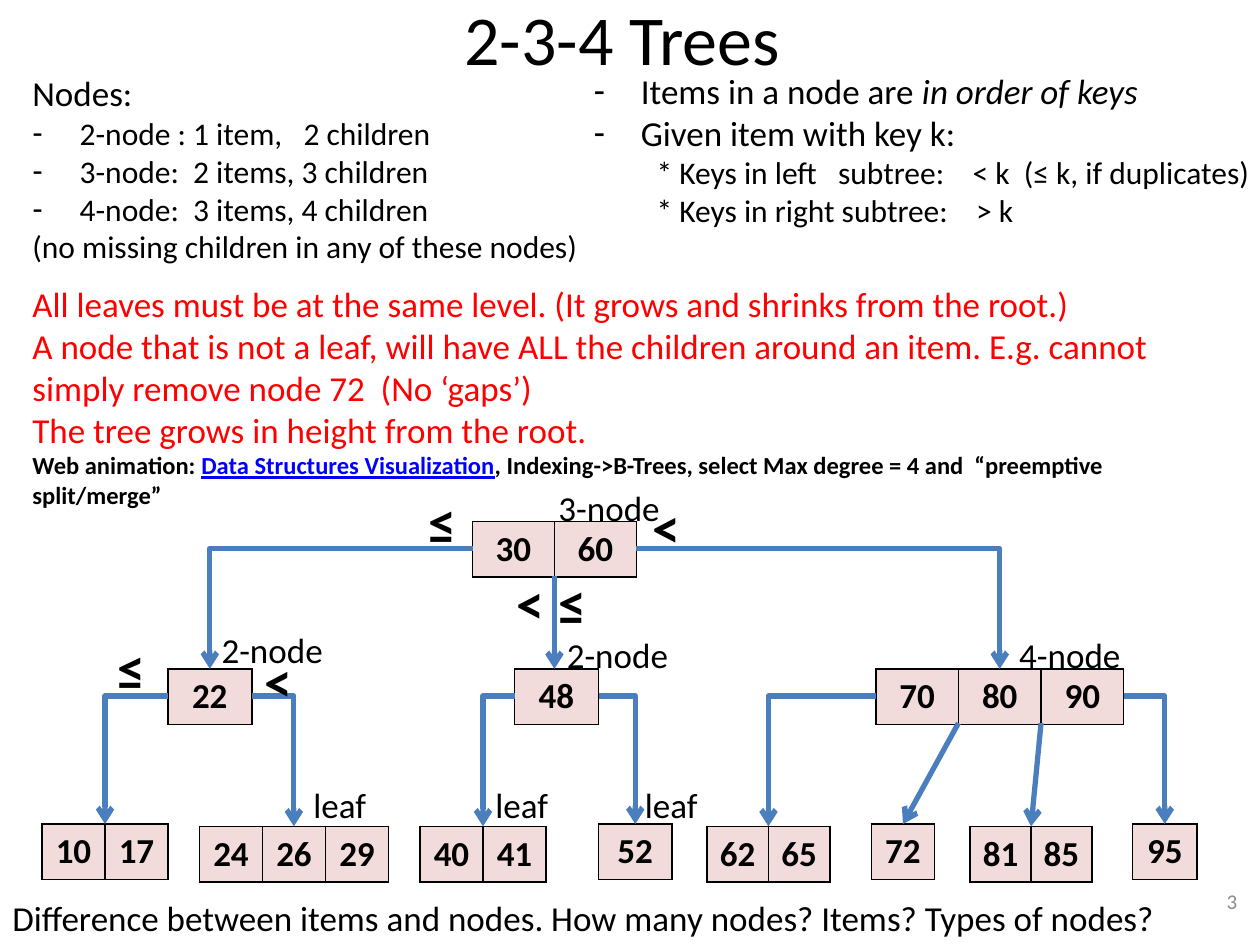
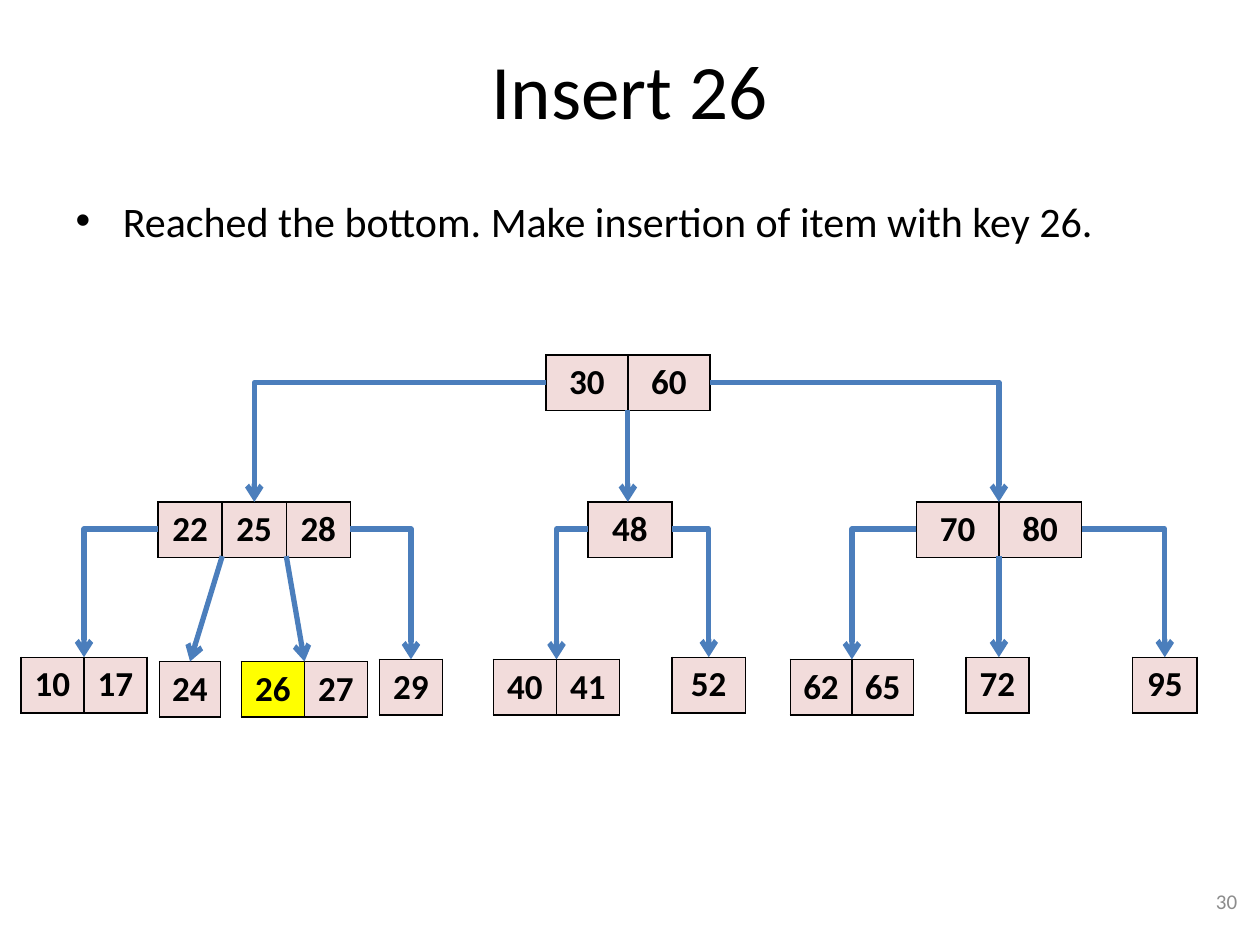
from lxml import etree
from pptx import Presentation
from pptx.dml.color import RGBColor
from pptx.enum.shapes import MSO_CONNECTOR
from pptx.enum.text import MSO_ANCHOR, MSO_AUTO_SIZE, PP_ALIGN
from pptx.oxml.ns import qn
from pptx.util import Pt

STRAIGHT, ELBOW = MSO_CONNECTOR.STRAIGHT, MSO_CONNECTOR.ELBOW
NO_FIT, MIDDLE = MSO_AUTO_SIZE.NONE, MSO_ANCHOR.MIDDLE
LEFT, CENTER, RIGHT = PP_ALIGN.LEFT, PP_ALIGN.CENTER, PP_ALIGN.RIGHT

THEME = {
    "font": "Calibri",
    "ink": "000000", "rule": "FF0000", "web": "0000FF", "number": "8C8C8C",
    "arrow": "4B7EBC", "node": "F2DCDB", "inserted": "FFFF00",
    "large": Pt(24), "normal": Pt(20), "small": Pt(18), "note": Pt(14),
    "sign": Pt(32), "page": Pt(12),
}
NODE_HEIGHT = 31
NODE_MIDDLE = 15.5

NORMAL = {"size": THEME["normal"]}
SMALL = {"size": THEME["small"]}
RULE = {"size": THEME["normal"], "color": "rule"}
NOTE = {"size": THEME["note"], "bold": True}
SIGN = {"size": THEME["sign"], "bold": True}

FLUSH = (0, 0, None)
DASH = (27, -27, "-")
DOT = (27, -27, "•")
SUB = (36, 0, None)


def write_run(paragraph, text, color="ink", **formats):
    run = paragraph.add_run()
    run.text = text
    for attribute, value in {"name": THEME["font"], **formats}.items():
        setattr(run.font, attribute, value)
    run.font.color.rgb = RGBColor.from_string(THEME[color])


def add_label(slide, text, box, formats, align=LEFT):
    frame = slide.shapes.add_textbox(*map(Pt, box)).text_frame
    frame.word_wrap = True
    frame.paragraphs[0].alignment = align
    write_run(frame.paragraphs[0], text, **formats)
    return frame


node_kinds = [
    (FLUSH, 0, [("Nodes:", NORMAL)]),
    (DASH, 0, [("2-node : 1 item,   2 children", SMALL)]),
    (DASH, 0, [("3-node:  2 items, 3 children", SMALL)]),
    (DASH, 0, [("4-node:  3 items, 4 children", SMALL)]),
    (FLUSH, 0, [("(no missing children in any of these nodes)", SMALL)]),
    (FLUSH, 9.8, [("All leaves must be at the same level. (It grows and shrinks from the root.)", RULE)]),
    (FLUSH, 0, [("A node that is not a leaf, will have ALL the children around an item. "
                 "E.g. cannot simply remove node 72  (No ‘gaps’)", RULE)]),
    (FLUSH, 0, [("The tree grows in height from the root.", RULE)]),
    (FLUSH, 0, [
        ("Web animation: ", NOTE),
        ("Data Structures Visualization", {**NOTE, "color": "web", "underline": True}),
        (", Indexing->B-Trees, select Max degree = 4 and  “preemptive split/merge”", NOTE),
    ]),
]
key_order = [
    (DASH, 0, [("Items in a node are ", NORMAL), ("in order of keys", {**NORMAL, "italic": True})]),
    (DASH, 0, [("Given item with key k:", NORMAL)]),
    (SUB, 0, [("* Keys in left   subtree:    < k  (≤ k, if duplicates)", SMALL)]),
    (SUB, 0, [("* Keys in right subtree:    > k", SMALL)]),
]
insertion = [
    (DOT, 4.8, [("Reached the bottom. Make insertion of item with key 26.", {"size": THEME["large"]})]),
]

slides = [
    {
        "layout": 3, "number": "3",
        "title": ("2-3-4 Trees ", (36, 5.8, 648, 31), Pt(40)),
        "lists": [(1, (11.3, 37.5, 703, 243), node_kinds), (2, (332, 36, 398, 99), key_order)],
        "nodes": {
            "30 60": (270, 298, 46.8),
            "22": (95.9, 382.2, 48),
            "48": (294, 382.2, 48),
            "70 80 90": (500.5, 382.2, 47.2),
            "10 17": (24, 470.9, 36),
            "24 26 29": (114, 472.2, 36),
            "40 41": (240, 472.2, 36),
            "52": (342, 470.9, 42),
            "62 65": (403.9, 472.2, 35.2),
            "72": (498, 470.9, 36),
            "81 85": (554.4, 472.2, 34.8),
            "95": (647.2, 470.9, 36.8),
        },
        "children": {
            "30 60": ["22", "48", "70 80 90"],
            "22": ["10 17", "24 26 29"],
            "48": ["40 41", "52"],
            "70 80 90": ["62 65", "72", "81 85", "95"],
        },
        "inserted": None,
        "signs": [("≤", 60, 359.3), ("<", 144, 365.8), ("≤", 237.6, 275.8),
                  ("<", 288, 321.1), ("≤", 312, 321.8), ("<", 366, 278)],
        "captions": [("2-node", 119.5, 355.7), ("3-node", 312, 274.3), ("4-node", 575.3, 358.6),
                     ("2-node", 316.8, 358.6), ("leaf", 172, 444.2), ("leaf", 361.4, 444.2),
                     ("leaf", 276, 444.2)],
        "question": "Difference between items and nodes. How many nodes? Items? Types of nodes?",
    },
    {
        "layout": 1, "number": "30",
        "title": ("Insert 26", (36, 5.8, 648, 90), Pt(44)),
        "lists": [(1, (36, 108, 648, 396), insertion)],
        "nodes": {
            "30 60": (312, 203, 46.8),
            "22 25 28": (90.4, 286.8, 36.6),
            "48": (336, 286.8, 48),
            "70 80": (523.6, 286.8, 47.2),
            "10 17": (12, 375.6, 36),
            "24": (91.2, 378, 34.8),
            "26 27": (138, 378, 36),
            "29": (216.8, 376.8, 36),
            "40 41": (282, 376.8, 36),
            "52": (384, 375.6, 42),
            "62 65": (451.6, 376.8, 35.2),
            "72": (552, 375.6, 36),
            "95": (647.2, 375.6, 36.8),
        },
        "children": {
            "30 60": ["22 25 28", "48", "70 80"],
            "22 25 28": ["10 17", "24", "26 27", "29"],
            "48": ["40 41", "52"],
            "70 80": ["62 65", "72", "95"],
        },
        "inserted": "26",
        "signs": [], "captions": [], "question": None,
    },
]

deck = Presentation()
deck.slide_width, deck.slide_height = Pt(720), Pt(540)

for content in slides:
    slide = deck.slides.add_slide(deck.slide_layouts[content["layout"]])
    heading, heading_box, heading_size = content["title"]
    areas = [(0, heading_box, [(None, 0, [(heading, {"size": heading_size})])])] + content["lists"]
    for index, box, entries in areas:
        area = slide.placeholders[index]
        area.left, area.top, area.width, area.height = map(Pt, box)
        area.text_frame.auto_size = NO_FIT
        for position, (indent, gap, runs) in enumerate(entries):
            line = area.text_frame.add_paragraph() if position else area.text_frame.paragraphs[0]
            line.space_before = Pt(gap)
            for text, formats in runs:
                write_run(line, text, **formats)
            if indent:
                margin, hanging, mark = indent
                properties = line._p.get_or_add_pPr()
                properties.set("marL", str(Pt(margin)))
                properties.set("indent", str(Pt(hanging)))
                bullet = etree.SubElement(properties, qn("a:buChar" if mark else "a:buNone"))
                if mark:
                    bullet.set("char", mark)

    nodes = content["nodes"]
    for name, (left, top, key_width) in nodes.items():
        keys = name.split()
        node = slide.shapes.add_table(
            1, len(keys), Pt(left), Pt(top), Pt(key_width * len(keys)), Pt(NODE_HEIGHT)).table
        node.first_row = node.horz_banding = False
        for column, key in enumerate(keys):
            node.columns[column].width = Pt(key_width)
            cell = node.cell(0, column)
            cell.margin_left = cell.margin_right = Pt(3)
            for side in ("a:lnL", "a:lnR", "a:lnT", "a:lnB"):
                border = etree.SubElement(cell._tc.get_or_add_tcPr(), qn(side), w=str(Pt(1)))
                border_fill = etree.SubElement(border, qn("a:solidFill"))
                etree.SubElement(border_fill, qn("a:srgbClr"), val=THEME["ink"])
            cell.fill.solid()
            shade = "inserted" if key == content["inserted"] else "node"
            cell.fill.fore_color.rgb = RGBColor.from_string(THEME[shade])
            cell.text_frame.paragraphs[0].alignment = CENTER
            write_run(cell.text_frame.paragraphs[0], key, size=THEME["normal"], bold=True)

    for parent, children in content["children"].items():
        left, top, key_width = nodes[parent]
        for slot, child in enumerate(children):
            child_left, end_y, child_key_width = nodes[child]
            end_x = child_left + child_key_width * len(child.split()) / 2
            start_x = left + key_width * slot
            outer = slot in (0, len(children) - 1)
            if outer:
                start_x = left + key_width * len(parent.split()) * (slot > 0)
            elif abs(end_x - start_x) < 3:
                end_x = start_x
            start_y = top + (NODE_MIDDLE if outer else NODE_HEIGHT)
            link = slide.shapes.add_connector(
                ELBOW if outer else STRAIGHT, Pt(start_x), Pt(start_y), Pt(end_x), Pt(end_y))
            link.line.width = Pt(3)
            link.line.color.rgb = RGBColor.from_string(THEME["arrow"])
            shape_properties = link._element.spPr
            etree.SubElement(shape_properties.find(qn("a:ln")), qn("a:tailEnd"), type="arrow")
            etree.SubElement(shape_properties, qn("a:effectLst"))
            if outer:
                shape_properties.find(qn("a:prstGeom")).set("prst", "bentConnector2")
                if end_x < start_x:
                    frame = shape_properties.find(qn("a:xfrm"))
                    frame.attrib.pop("flipH")
                    frame.set("rot", "10800000")
                    frame.set("flipV", "1")

    for sign, left, top in content["signs"]:
        add_label(slide, sign, (left, top, 30, 46), SIGN)
    for caption, left, top in content["captions"]:
        add_label(slide, caption, (left, top, 73, 31.5), NORMAL)
    if content["question"]:
        add_label(slide, content["question"], (0, 508.5, 700, 31.5), NORMAL)
    page = add_label(slide, content["number"], (546, 500.5, 168, 28.8),
                     {"size": THEME["page"], "color": "number"}, RIGHT)
    page.vertical_anchor = MIDDLE

deck.save("out.pptx")
